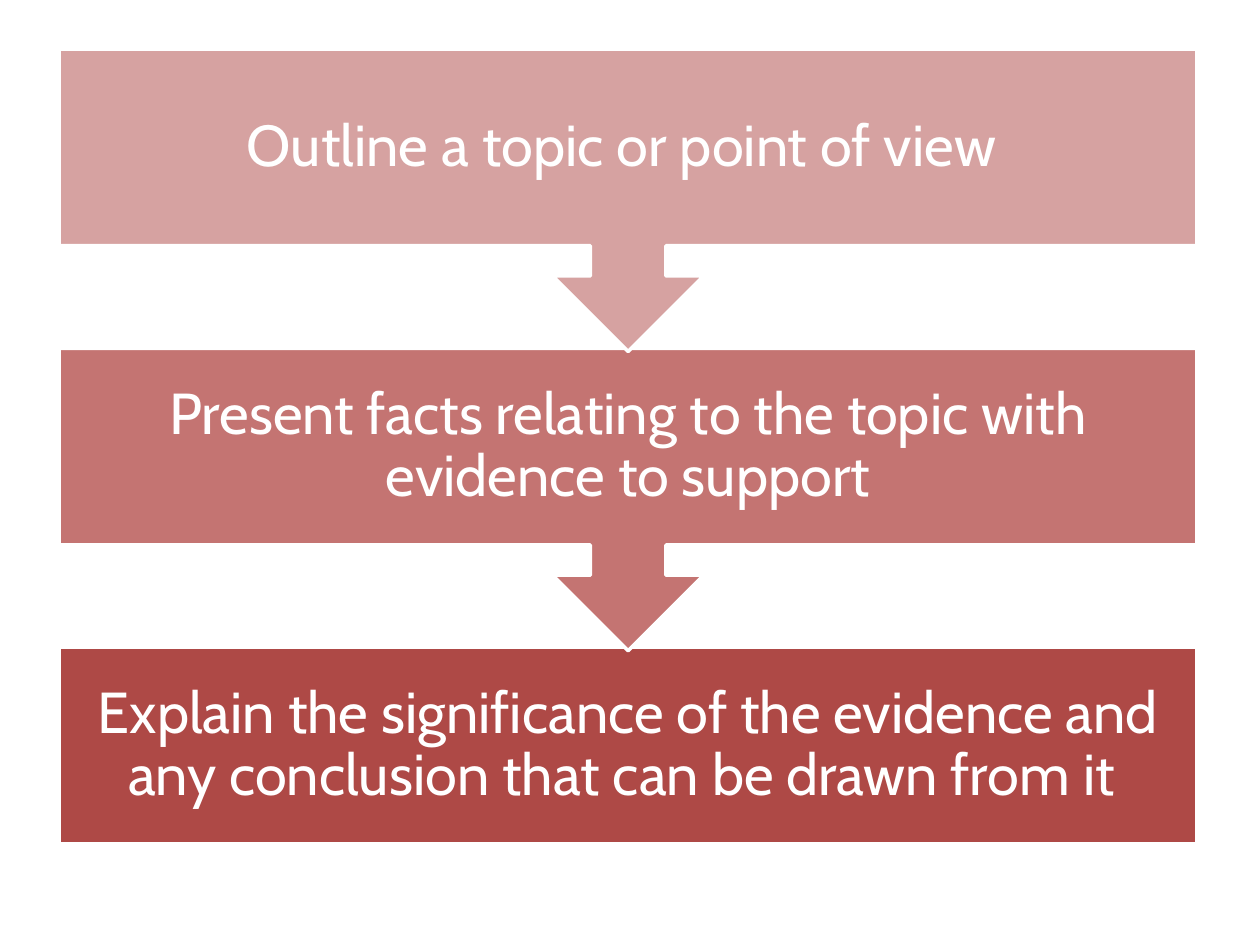
from dataclasses import dataclass

from pptx import Presentation
from pptx.dml.color import RGBColor
from pptx.enum.shapes import MSO_SHAPE
from pptx.enum.text import MSO_ANCHOR, PP_ALIGN
from pptx.slide import Slide
from pptx.util import Inches, Pt


@dataclass(frozen=True)
class Theme:
    font: str = "Cabin"
    size: float = 33
    line: float = 2
    white: str = "FFFFFF"
    pale: str = "D6A2A1"
    mid: str = "C47472"
    deep: str = "AE4946"


@dataclass(frozen=True)
class Step:
    text: str
    fill: str
    arrow: bool = True


THEME = Theme()
LEFT, TOP, WIDTH = 0.47, 0.39, 9.03
BODY, CALLOUT, PITCH = 1.56, 2.4, 2.375
INSET = 0.26

STEPS = [
    Step("Outline a topic or point of view ", THEME.pale),
    Step("Present facts relating to the topic with evidence to support", THEME.mid),
    Step(
        "Explain the significance of the evidence and any conclusion that can be drawn from it ",
        THEME.deep,
        arrow=False,
    ),
]


def draw_block(slide: Slide, step: Step, top: float) -> None:
    kind = MSO_SHAPE.UP_ARROW_CALLOUT if step.arrow else MSO_SHAPE.RECTANGLE
    height = CALLOUT if step.arrow else BODY
    block = slide.shapes.add_shape(
        kind, Inches(LEFT), Inches(top), Inches(WIDTH), Inches(height)
    )
    block.rotation = 180 if step.arrow else 0
    block.shadow.inherit = False
    block.fill.solid()
    block.fill.fore_color.rgb = RGBColor.from_string(step.fill)
    block.line.color.rgb = RGBColor.from_string(THEME.white)
    block.line.width = Pt(THEME.line)


def draw_label(slide: Slide, step: Step, top: float) -> None:
    box = slide.shapes.add_textbox(
        Inches(LEFT), Inches(top), Inches(WIDTH), Inches(BODY)
    )
    frame = box.text_frame
    frame.text = step.text
    frame.word_wrap = True
    frame.vertical_anchor = MSO_ANCHOR.MIDDLE
    frame.margin_left = frame.margin_right = Inches(INSET)
    frame.margin_top = frame.margin_bottom = Inches(INSET)
    para = frame.paragraphs[0]
    para.alignment = PP_ALIGN.CENTER
    para.line_spacing = 0.9
    font = para.runs[0].font
    font.name = THEME.font
    font.size = Pt(THEME.size)
    font.color.rgb = RGBColor.from_string(THEME.white)


def main() -> None:
    deck = Presentation()
    deck.slide_width, deck.slide_height = Inches(10), Inches(7.5)
    slide = deck.slides.add_slide(deck.slide_layouts[6])
    for row, step in reversed(list(enumerate(STEPS))):
        top = TOP + row * PITCH
        draw_block(slide, step, top)
        draw_label(slide, step, top)
    deck.save("out.pptx")


if __name__ == "__main__":
    main()
